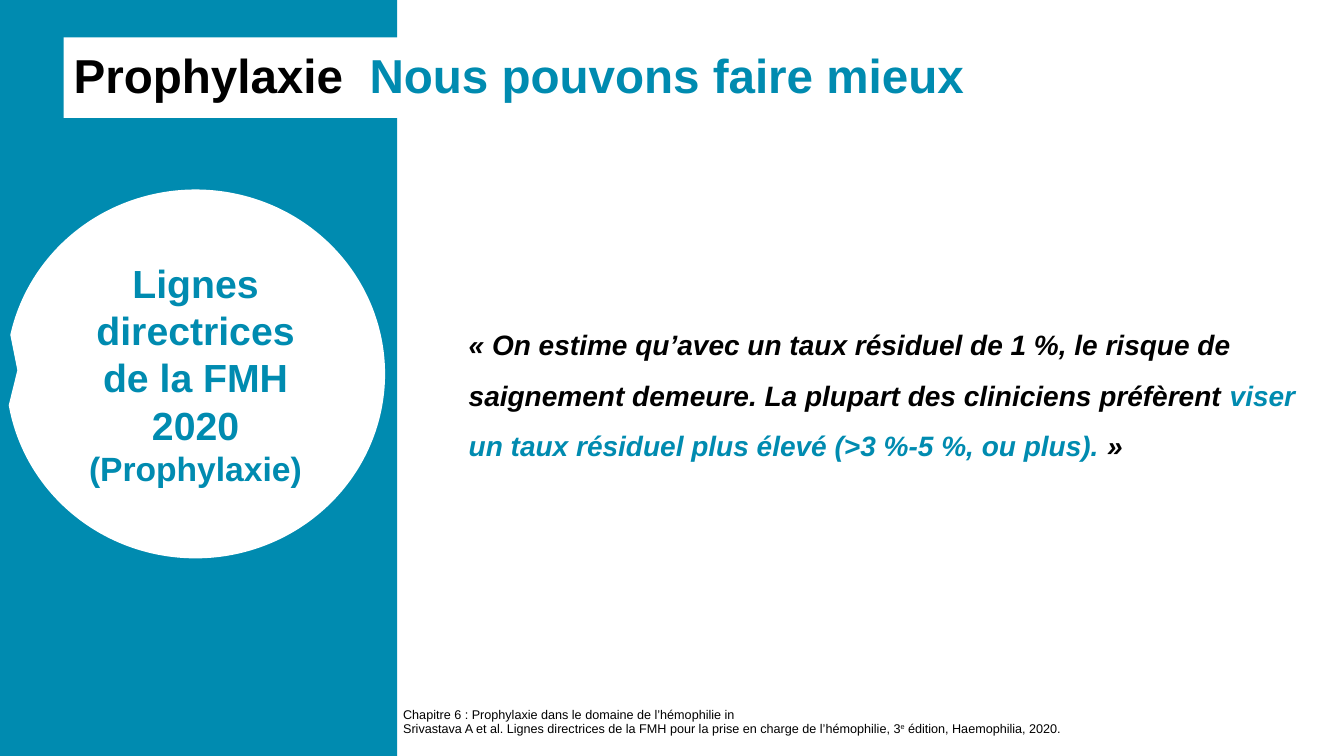
from pptx import Presentation
from pptx.dml.color import RGBColor
from pptx.enum.shapes import MSO_SHAPE as SHAPE
from pptx.enum.text import MSO_ANCHOR as ANCHOR, MSO_AUTO_SIZE as AUTO, PP_ALIGN as ALIGN
from pptx.util import Inches, Pt

COLORS = {"teal": "008BB0", "white": "FFFFFF", "black": "000000"}


def rgb(name):
    """Return the named colour."""
    return RGBColor.from_string(COLORS[name])


def add_box(s, kind, box, fill):
    """Add a flat filled shape without outline."""
    sp = s.shapes.add_shape(kind, *map(Inches, box))
    sp.shadow.inherit = False
    sp.fill.solid()
    sp.fill.fore_color.rgb = rgb(fill)
    sp.line.fill.background()
    return sp


def write(sp, paragraphs, font, para, anchor=ANCHOR.MIDDLE):
    """Fill a shape with paragraphs made of (text, colour, font changes) runs."""
    tf = sp.text_frame
    for key, value in {"word_wrap": True, "auto_size": AUTO.NONE, "vertical_anchor": anchor}.items():
        setattr(tf, key, value)
    for i, runs in enumerate(paragraphs):
        p = tf.paragraphs[0] if i == 0 else tf.add_paragraph()
        for key, value in para.items():
            setattr(p, key, value)
        for text, color, changes in runs:
            r = p.add_run()
            r.text = text
            for key, value in {"name": "Arial", **font, **changes}.items():
                setattr(r.font, key, value)
            r.font.color.rgb = rgb(color)
    return tf


def add_title(s, box):
    """Place the title on a white band in front of the side panel."""
    title = s.shapes.title
    title.left, title.top, title.width, title.height = map(Inches, box)
    title.fill.solid()
    title.fill.fore_color.rgb = rgb("white")
    title.element.getparent().append(title.element)
    runs = [("Prophylaxie  ", "black", {}), ("Nous pouvons faire mieux", "teal", {})]
    write(title, [runs], {"size": Pt(34), "bold": True},
          {"alignment": ALIGN.LEFT, "line_spacing": 0.9})


def add_quote(s, box):
    """Add the quotation with its highlighted target."""
    sp = add_box(s, SHAPE.RECTANGLE, box, "white")
    runs = [
        ("« On estime qu’avec un taux résiduel de 1 %, le risque de saignement demeure. "
         "La plupart des cliniciens préfèrent ", "black", {}),
        ("viser un taux résiduel plus élevé (>3 %-5 %, ou plus).", "teal", {}),
        (" »", "black", {}),
    ]
    write(sp, [runs], {"size": Pt(20), "bold": True, "italic": True},
          {"alignment": ALIGN.LEFT, "line_spacing": 1.5, "space_after": Pt(6)})


def add_callout(s, box):
    """Add the round callout naming the guidelines."""
    sp = add_box(s, SHAPE.OVAL_CALLOUT, box, "white")
    sp.adjustments[0], sp.adjustments[1] = -0.47, -0.01
    lines = [("Lignes directrices de la FMH", "teal", {}), ("2020", "teal", {}),
             ("(Prophylaxie)", "teal", {"size": Pt(24)})]
    write(sp, [[line] for line in lines], {"size": Pt(28), "bold": True},
          {"alignment": ALIGN.CENTER})


def add_reference(s, box):
    """Add the source reference at the foot of the slide."""
    sp = s.shapes.add_textbox(*map(Inches, box))
    paragraphs = [
        [("Chapitre 6 : Prophylaxie dans le domaine de l’hémophilie in", "black", {})],
        [("Srivastava A et al. Lignes directrices de la FMH pour la prise en charge "
          "de l’hémophilie, 3", "black", {}),
         ("e", "black", {}),
         (" édition, Haemophilia, 2020.", "black", {})],
    ]
    tf = write(sp, paragraphs, {"size": Pt(9)}, {"line_spacing": 0.9}, ANCHOR.BOTTOM)
    tf.margin_bottom = 0
    ordinal = tf.paragraphs[1].runs[1]
    ordinal.font._element.set("baseline", "30000")


def main():
    """Build and save the slide."""
    prs = Presentation()
    prs.slide_width, prs.slide_height = Inches(13.33), Inches(7.5)
    s = prs.slides.add_slide(prs.slide_layouts[5])
    add_box(s, SHAPE.RECTANGLE, (0, 0, 3.94, 7.5), "teal")
    add_title(s, (0.63, 0.37, 12.7, 0.8))
    add_quote(s, (4.55, 1.69, 8.58, 4.29))
    add_callout(s, (0.06, 1.88, 3.76, 3.66))
    add_reference(s, (3.9, 6.93, 6.88, 0.37))
    prs.save("out.pptx")


if __name__ == "__main__":
    main()
